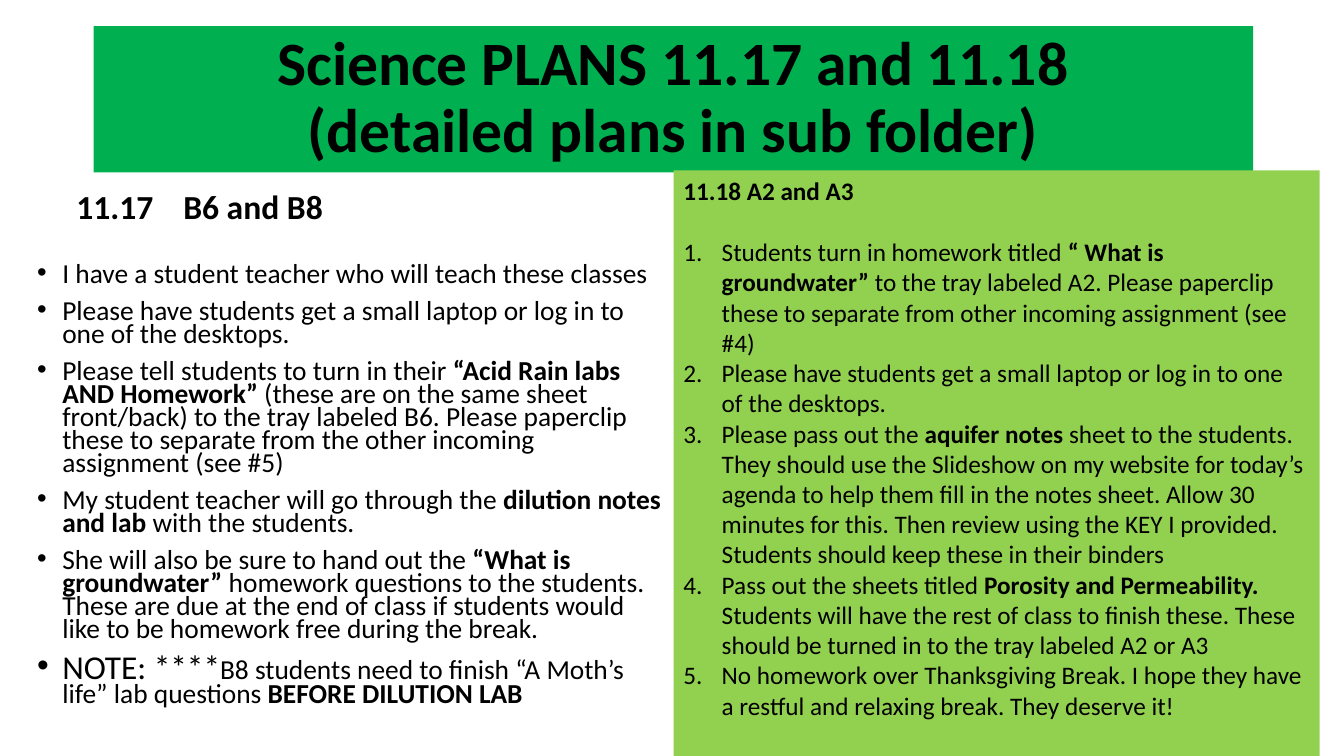
from lxml.etree import SubElement
from pptx import Presentation
from pptx.dml.color import RGBColor
from pptx.enum.shapes import MSO_SHAPE
from pptx.enum.text import MSO_ANCHOR, PP_ALIGN
from pptx.oxml.ns import qn
from pptx.util import Inches, Pt

# Content: a paragraph is a list of text pieces, each with its format
BOLD = {"bold": True}
PLAIN = {"bold": False}

TITLE = [[("Science PLANS 11.17 and 11.18\n(detailed plans in sub folder)", BOLD)]]
FIRST_DAY_HEADING = [[("11.17\tB6 and B8", BOLD)]]
FIRST_DAY_PLANS = [
    [("I have a student teacher who will teach these classes", PLAIN)],
    [("Please have students get a small laptop or log in to one of the desktops.", PLAIN)],
    [("Please tell students to turn in their ", PLAIN),
     ("“Acid Rain labs AND Homework”", BOLD),
     (" (these are on the same sheet front/back) to the tray labeled B6. Please paperclip "
      "these to separate from the other incoming assignment (see #5)", PLAIN)],
    [("My student teacher will go through the ", PLAIN),
     ("dilution notes and lab", BOLD),
     (" with the students.", PLAIN)],
    [("She will also be sure to hand out the ", PLAIN),
     ("“What is groundwater”", BOLD),
     (" homework questions to the students. These are due at the end of class if students "
      "would like to be homework free during the break.", PLAIN)],
    [("NOTE: ****", {"bold": False, "size": Pt(23.8)}),
     ("B8 students need to finish “A Moth’s life” lab questions ", PLAIN),
     ("BEFORE DILUTION LAB", BOLD)],
]
SECOND_DAY_HEADING = [[("11.18 A2 and A3", BOLD)]]
SECOND_DAY_PLANS = [
    [("Students turn in homework titled ", PLAIN),
     ("“ What is groundwater” ", BOLD),
     ("to the tray labeled A2. Please paperclip these to separate from other incoming "
      "assignment (see #4)", PLAIN)],
    [("Please have students get a small laptop or log in to one of the desktops.", PLAIN)],
    [("Please pass out the ", PLAIN),
     ("aquifer notes ", BOLD),
     ("sheet to the students. They should use the Slideshow on my website for today’s agenda "
      "to help them fill in the notes sheet. Allow 30 minutes for this. Then review using the "
      "KEY I provided. Students should keep these in their binders", PLAIN)],
    [("Pass out the sheets titled ", PLAIN),
     ("Porosity and Permeability. ", BOLD),
     ("Students will have the rest of class to finish these. These should be turned in to the "
      "tray labeled A2 or A3", PLAIN)],
    [("No homework over Thanksgiving Break. I hope they have a restful and relaxing break. "
      "They deserve it!", PLAIN)],
]

# Paragraph formats
TITLE_FORMAT = {"alignment": PP_ALIGN.CENTER, "line_spacing": 0.9}
HEADING_FORMAT = {"line_spacing": 0.9, "space_before": Pt(10)}
BULLET_FORMAT = {"line_spacing": 0.7, "space_before": Pt(10)}
LEFT_FORMAT = {"alignment": PP_ALIGN.LEFT}
SPACED_FORMAT = {"alignment": PP_ALIGN.LEFT, "space_after": Pt(22)}

BULLET = ("buChar", {"char": "•"}, 0.25)
NUMBER = ("buAutoNum", {"type": "arabicPeriod"}, 0.38)


def color(hex_string):
    return RGBColor.from_string(hex_string)


def apply_format(target, values):
    for name, value in values.items():
        setattr(target, name, value)


def add_list_marker(paragraph, marker):
    tag, attributes, indent = marker
    properties = paragraph._p.get_or_add_pPr()
    properties.set("marL", str(Inches(indent)))
    properties.set("indent", str(-Inches(indent)))
    SubElement(properties, qn("a:buFont"), typeface="Arial")
    SubElement(properties, qn(f"a:{tag}"), attributes)


def add_tab_stop(paragraph, position):
    tab_list = SubElement(paragraph._p.get_or_add_pPr(), qn("a:tabLst"))
    SubElement(tab_list, qn("a:tab"), pos=str(Inches(position)), algn="l")


def write(frame, paragraphs, size, paragraph_format, marker=None):
    for pieces in paragraphs:
        paragraph = frame.paragraphs[0]
        if paragraph.runs:
            paragraph = frame.add_paragraph()
        apply_format(paragraph, paragraph_format)
        if marker:
            add_list_marker(paragraph, marker)
        for text, run_format in pieces:
            for index, line in enumerate(text.split("\n")):
                if index:
                    paragraph.add_line_break()
                run = paragraph.add_run()
                run.text = line
                apply_format(run.font, {"name": "Calibri", "size": Pt(size), **run_format})
                run.font.color.rgb = color("000000")


def add_box(slide, box, anchor, fill=None):
    position = [Inches(length) for length in box]
    if fill:
        shape = slide.shapes.add_shape(MSO_SHAPE.RECTANGLE, *position)
        shape.shadow.inherit = False
        shape.fill.solid()
        shape.fill.fore_color.rgb = color(fill)
        shape.line.fill.background()
    else:
        shape = slide.shapes.add_textbox(*position)
    apply_format(shape.text_frame, {"word_wrap": True, "vertical_anchor": anchor})
    return shape.text_frame


def main():
    presentation = Presentation()
    presentation.slide_width = Inches(13.33)
    presentation.slide_height = Inches(7.5)
    slide = presentation.slides.add_slide(presentation.slide_layouts[6])

    # Title band
    title = add_box(slide, (0.93, 0.26, 11.5, 1.45), MSO_ANCHOR.MIDDLE, "00B050")
    write(title, TITLE, 44, TITLE_FORMAT)

    # Left column: first day
    heading = add_box(slide, (0.66, 1.4, 5.64, 0.9), MSO_ANCHOR.BOTTOM)
    write(heading, FIRST_DAY_HEADING, 24, HEADING_FORMAT)
    add_tab_stop(heading.paragraphs[0], 1.06)
    first_day = add_box(slide, (0.27, 2.58, 6.43, 5.17), MSO_ANCHOR.TOP)
    write(first_day, FIRST_DAY_PLANS, 19.6, BULLET_FORMAT, BULLET)

    # Right column: second day
    second_day = add_box(slide, (6.68, 1.69, 6.41, 6.19), MSO_ANCHOR.TOP, "92D050")
    write(second_day, SECOND_DAY_HEADING, 18, SPACED_FORMAT)
    write(second_day, SECOND_DAY_PLANS, 18, LEFT_FORMAT, NUMBER)

    presentation.save("out.pptx")


if __name__ == "__main__":
    main()
